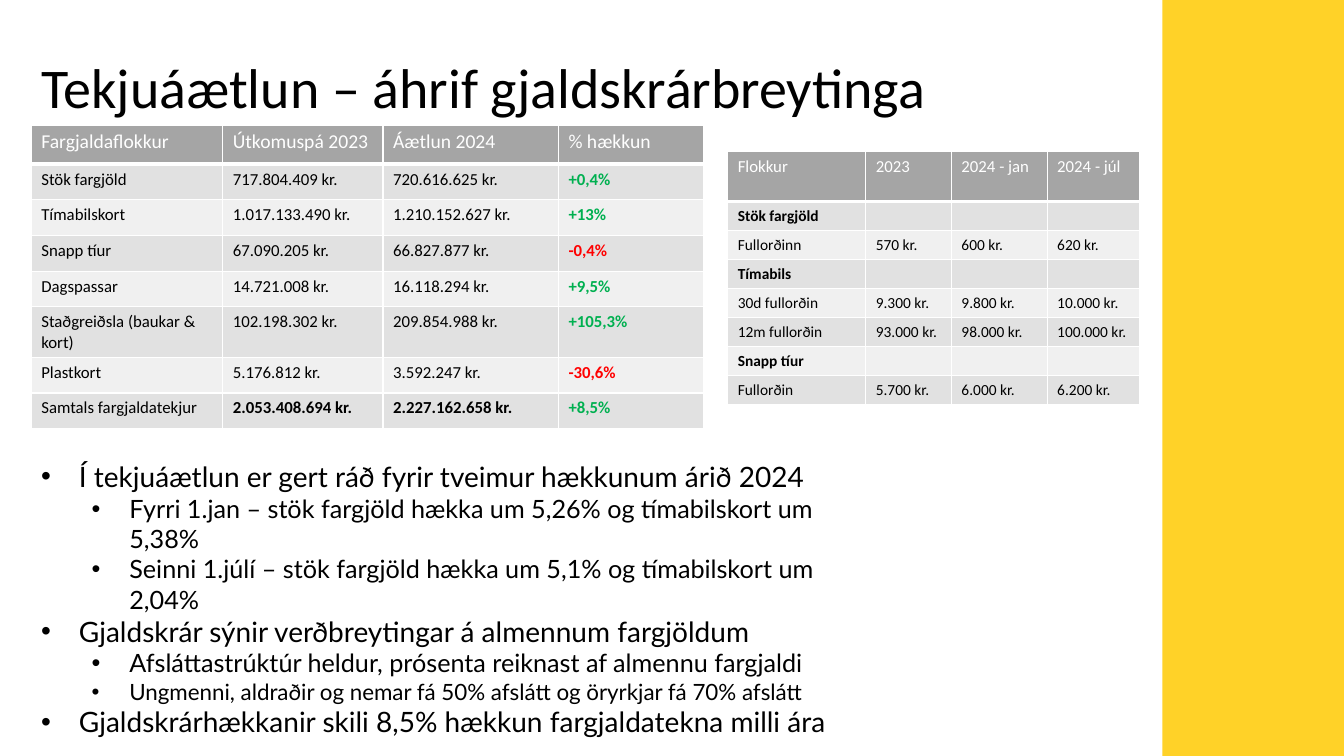
from dataclasses import dataclass

from lxml.etree import SubElement
from pptx import Presentation
from pptx.dml.color import RGBColor
from pptx.enum.shapes import MSO_SHAPE as Preset
from pptx.enum.text import MSO_ANCHOR as Anchor
from pptx.oxml.ns import qn
from pptx.slide import Slide
from pptx.table import _Cell as TableCell
from pptx.util import Pt

BLACK, WHITE, YELLOW = "000000", "FFFFFF", "FFD228"
GREEN, RED = "00B050", "FF0000"
HEADER_GREY, BAND_GREYS = "A5A5A5", ("E1E1E1", "F0F0F0")


@dataclass
class Box:
    left: float
    top: float
    width: float
    height: float

    def lengths(self) -> tuple:
        return Pt(self.left), Pt(self.top), Pt(self.width), Pt(self.height)


@dataclass
class FareTable:
    left: float
    top: float
    widths: list[float]
    header_height: float
    row_height: float
    header_size: int
    body_size: int
    rows: list[list[str]]
    has_total: bool = False


@dataclass
class Bullet:
    level: int
    size: float
    text: str


REVENUE = FareTable(
    22.3, 89.3, [136.8, 114.5, 125.3, 103.7], 28, 25.5, 14, 12,
    [
        ["Fargjaldaflokkur", "Útkomuspá 2023", "Áætlun 2024", "% hækkun"],
        ["Stök fargjöld", "717.804.409 kr.", "720.616.625 kr.", "+0,4%"],
        ["Tímabilskort", "1.017.133.490 kr.", "1.210.152.627 kr.", "+13%"],
        ["Snapp tíur", "67.090.205 kr.", "66.827.877 kr.", "-0,4%"],
        ["Dagspassar", "14.721.008 kr.", "16.118.294 kr.", "+9,5%"],
        ["Staðgreiðsla (baukar & kort)", "102.198.302 kr.", "209.854.988 kr.", "+105,3%"],
        ["Plastkort", "5.176.812 kr.", "3.592.247 kr.", "-30,6%"],
        ["Samtals fargjaldatekjur", "2.053.408.694 kr.", "2.227.162.658 kr.", "+8,5%"],
    ],
    has_total=True,
)

# A row with a single entry is a section heading
PRICES = FareTable(
    519.8, 108, [98.6, 61.2, 68.4, 66.2], 36, 20.7, 12, 11,
    [
        ["Flokkur", "2023", "2024 - jan", "2024 - júl"],
        ["Stök fargjöld"],
        ["Fullorðinn", "570 kr.", "600 kr.", "620 kr."],
        ["Tímabils"],
        ["30d fullorðin", "9.300 kr.", "9.800 kr.", "10.000 kr."],
        ["12m fullorðin", "93.000 kr.", "98.000 kr.", "100.000 kr."],
        ["Snapp tíur"],
        ["Fullorðin", "5.700 kr.", "6.000 kr.", "6.200 kr."],
    ],
)

BULLETS = [
    Bullet(0, 20, "Í tekjuáætlun er gert ráð fyrir tveimur hækkunum árið 2024"),
    Bullet(1, 18, "Fyrri 1.jan – stök fargjöld hækka um 5,26% og tímabilskort um 5,38%"),
    Bullet(1, 18, "Seinni 1.júlí – stök fargjöld hækka um 5,1% og tímabilskort um 2,04%"),
    Bullet(0, 20, "Gjaldskrár sýnir verðbreytingar á almennum fargjöldum"),
    Bullet(1, 18, "Afsláttastrúktúr heldur, prósenta reiknast af almennu fargjaldi"),
    Bullet(1, 16, "Ungmenni, aldraðir og nemar fá 50% afslátt og öryrkjar fá 70% afslátt"),
    Bullet(0, 20, "Gjaldskrárhækkanir skili 8,5% hækkun fargjaldatekna milli ára"),
]


def color(value: str) -> RGBColor:
    return RGBColor.from_string(value)


def add_span(para, text: str, size: float, font: str = "Calibri",
             shade: str = BLACK, bold: bool = False) -> None:
    span = para.add_run()
    span.text = text
    span.font.size = Pt(size)
    span.font.name = font
    span.font.bold = bold
    span.font.color.rgb = color(shade)


def add_side_band(page: Slide, box: Box) -> None:
    band = page.shapes.add_shape(Preset.RECTANGLE, *box.lengths())
    band.shadow.inherit = False
    band.fill.solid()
    band.fill.fore_color.rgb = color(YELLOW)
    band.line.fill.background()


def add_title(page: Slide, box: Box, text: str) -> None:
    frame = page.shapes.add_textbox(*box.lengths()).text_frame
    frame.word_wrap = True
    frame.vertical_anchor = Anchor.BOTTOM
    para = frame.paragraphs[0]
    para.line_spacing = 0.9
    add_span(para, text, 40)


def add_bullets(page: Slide, box: Box, bullets: list[Bullet]) -> None:
    frame = page.shapes.add_textbox(*box.lengths()).text_frame
    frame.word_wrap = True
    for index, bullet in enumerate(bullets):
        para = frame.add_paragraph() if index else frame.paragraphs[0]
        para.level = bullet.level
        properties = para._p.get_or_add_pPr()
        properties.set("marL", str(Pt(27 + 36 * bullet.level)))
        properties.set("indent", str(Pt(-27)))
        SubElement(properties, qn("a:buFont"), typeface="Arial")
        SubElement(properties, qn("a:buChar"), char="•")
        add_span(para, bullet.text, bullet.size, "Lato")


def style_cell(cell: TableCell, fill: str, bottom_line: float) -> None:
    properties = cell._tc.get_or_add_tcPr()
    for side, weight in (("L", 1), ("R", 1), ("T", 1), ("B", bottom_line)):
        line = SubElement(properties, qn(f"a:ln{side}"), w=str(Pt(weight)))
        solid = SubElement(line, qn("a:solidFill"))
        SubElement(solid, qn("a:srgbClr"), val=WHITE)
    cell.fill.solid()
    cell.fill.fore_color.rgb = color(fill)


def text_color(text: str) -> str:
    return {"+": GREEN, "-": RED}.get(text[0], BLACK)


def add_fare_table(page: Slide, fares: FareTable) -> None:
    rows, widths = fares.rows, fares.widths
    heights = [fares.header_height] + [fares.row_height] * (len(rows) - 1)
    box = Box(fares.left, fares.top, sum(widths), sum(heights))
    table = page.shapes.add_table(len(rows), len(widths), *box.lengths()).table
    table.first_row = table.horz_banding = False
    for column, width in zip(table.columns, widths):
        column.width = Pt(width)
    for r, (entries, height) in enumerate(zip(rows, heights)):
        table.rows[r].height = Pt(height)
        is_header = r == 0
        is_section = len(entries) == 1
        is_total = fares.has_total and r == len(rows) - 1
        size = fares.header_size if is_header else fares.body_size
        for c in range(len(widths)):
            cell = table.cell(r, c)
            fill = HEADER_GREY if is_header else BAND_GREYS[(r - 1) % 2]
            style_cell(cell, fill, 3 if is_header else 1)
            para = cell.text_frame.paragraphs[0]
            if c >= len(entries):
                # Keep empty cells as low as the filled ones
                SubElement(para._p, qn("a:endParaRPr"), sz=str(size * 100))
                continue
            shade = WHITE if is_header else text_color(entries[c])
            bold = is_section or shade in (GREEN, RED) or (is_total and c > 0)
            add_span(para, entries[c], size, shade=shade, bold=bold)


def main() -> None:
    deck = Presentation()
    deck.slide_width, deck.slide_height = Pt(960), Pt(540)
    page = deck.slides.add_slide(deck.slide_layouts[6])

    # Side band and heading
    add_side_band(page, Box(830.2, 0, 129.8, 540))
    add_title(page, Box(22.3, 24.5, 720, 65.5), "Tekjuáætlun – áhrif gjaldskrárbreytinga")

    # Explanations below the tables
    add_bullets(page, Box(22.3, 324.7, 604, 130.3), BULLETS)

    # Revenue plan and price list
    for fares in (REVENUE, PRICES):
        add_fare_table(page, fares)

    deck.save("out.pptx")


if __name__ == "__main__":
    main()
